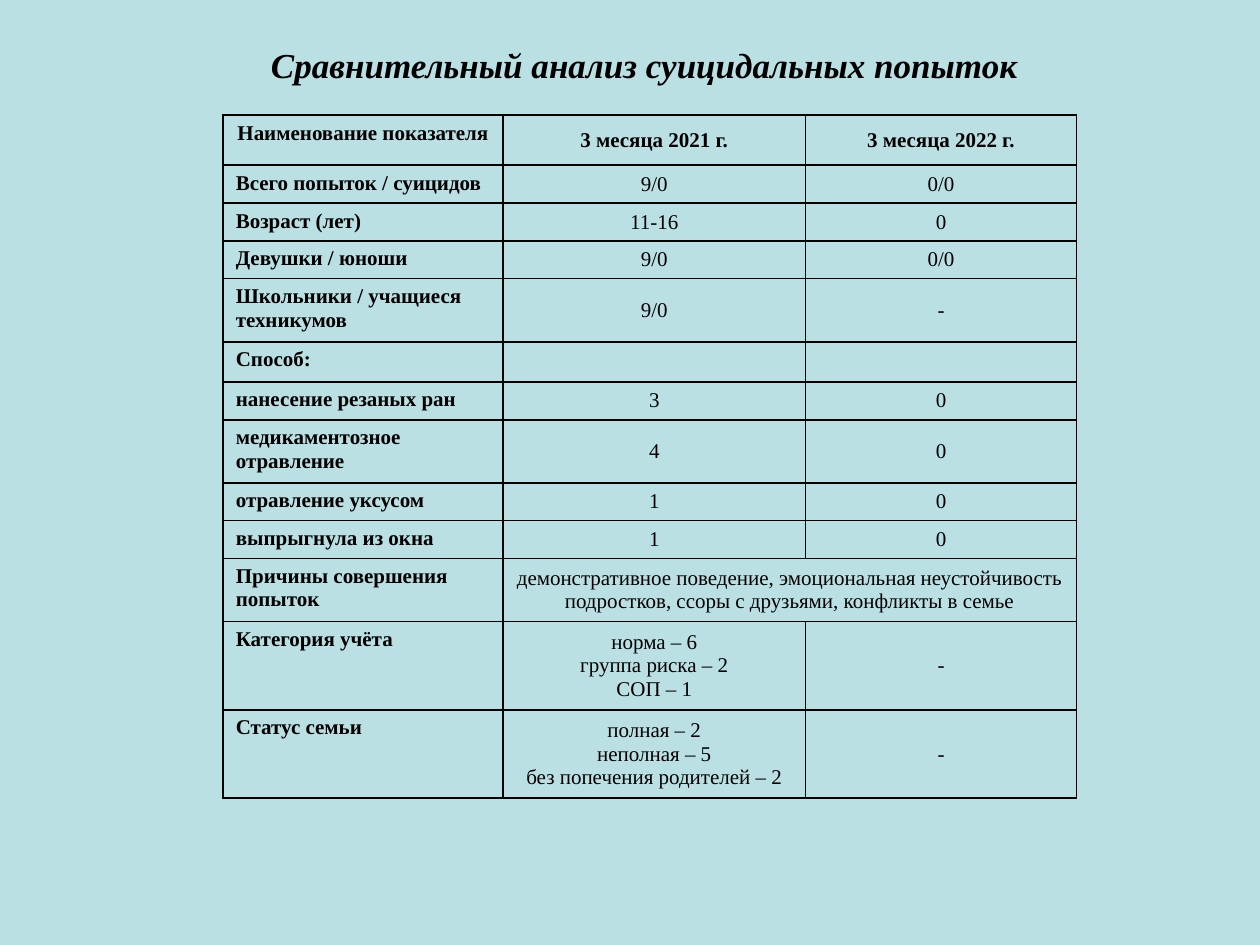
import pptx
import pptx.util
import pptx.dml.color
import pptx.enum.text
import pptx.oxml
import pptx.oxml.ns
from dataclasses import dataclass

Cm, Pt = pptx.util.Cm, pptx.util.Pt
RGB = pptx.dml.color.RGBColor
Align = pptx.enum.text.PP_ALIGN
Anchor = pptx.enum.text.MSO_ANCHOR


@dataclass(frozen=True)
class Theme:
    font: str = "Times New Roman"
    back: str = "BBE0E3"
    ink: str = "000000"
    head: int = 20
    body: int = 12
    line: int = 1


THEME = Theme()

TITLE = "Сравнительный анализ суицидальных попыток"

# Row height in cm, then label and values; a lone value spans both years
ROWS = [
    (1.01, "Наименование показателя", "3 месяца 2021 г.", "3 месяца 2022 г."),
    (0.73, "Всего попыток / суицидов", "9/0", "0/0"),
    (0.73, "Возраст (лет)", "11-16", "0"),
    (0.73, "Девушки / юноши", "9/0", "0/0"),
    (1.19, "Школьники / учащиеся техникумов", "9/0", "-"),
    (0.81, "Способ:", "", ""),
    (0.73, "нанесение резаных ран", "3", "0"),
    (1.19, "медикаментозное отравление", "4", "0"),
    (0.73, "отравление уксусом", "1", "0"),
    (0.73, "выпрыгнула из окна", "1", "0"),
    (1.19, "Причины совершения попыток",
     "демонстративное поведение, эмоциональная неустойчивость "
     "подростков, ссоры с друзьями, конфликты в семье"),
    (1.67, "Категория учёта", "норма – 6\nгруппа риска – 2\nСОП – 1", "-"),
    (1.67, "Статус семьи",
     "полная – 2\nнеполная – 5\nбез попечения родителей – 2", "-"),
]
COLS = [5.64, 6.1, 5.46]


def write(frame, text, size, align, bold=False, slant=False):
    frame.text = text
    for para in frame.paragraphs:
        para.alignment = align
        font = para.font
        font.name, font.size = THEME.font, Pt(size)
        font.bold, font.italic = bold, slant
        font.color.rgb = RGB.from_string(THEME.ink)


def border(cell):
    props = cell._tc.get_or_add_tcPr()
    for side in "LRTB":
        props.append(pptx.oxml.parse_xml(
            f'<a:ln{side} {pptx.oxml.ns.nsdecls("a")} w="{Pt(THEME.line)}">'
            f'<a:solidFill><a:srgbClr val="{THEME.ink}"/></a:solidFill>'
            f'</a:ln{side}>'))


def add_title(slide):
    box = slide.shapes.add_textbox(Cm(2.69), Cm(0.71), Cm(20.6), Cm(1.19))
    frame = box.text_frame
    frame.word_wrap = True
    frame.vertical_anchor = Anchor.MIDDLE
    write(frame, TITLE, THEME.head, Align.CENTER, True, True)


def add_grid(slide):
    high = sum(row[0] for row in ROWS)
    grid = slide.shapes.add_table(len(ROWS), len(COLS), Cm(4.5), Cm(2.32),
                                  Cm(sum(COLS)), Cm(high)).table
    grid.first_row = grid.horz_banding = False
    for col, wide in zip(grid.columns, COLS):
        col.width = Cm(wide)
    for r, (tall, *texts) in enumerate(ROWS):
        grid.rows[r].height = Cm(tall)
        for c in range(len(COLS)):
            cell = grid.cell(r, c)
            border(cell)
            cell.fill.background()
        for c, text in enumerate(texts):
            cell = grid.cell(r, c)
            label, top = c == 0, r == 0
            cell.vertical_anchor = Anchor.TOP if label else Anchor.MIDDLE
            align = Align.LEFT if label and not top else Align.CENTER
            write(cell.text_frame, text, THEME.body, align, label or top)
        if len(texts) < len(COLS):
            grid.cell(r, 1).merge(grid.cell(r, 2))


def main():
    deck = pptx.Presentation()
    deck.slide_width, deck.slide_height = Cm(25.4), Cm(19.05)
    slide = deck.slides.add_slide(deck.slide_layouts[6])

    # Background
    fill = slide.background.fill
    fill.solid()
    fill.fore_color.rgb = RGB.from_string(THEME.back)

    # Content
    add_title(slide)
    add_grid(slide)
    deck.save("out.pptx")


if __name__ == "__main__":
    main()
